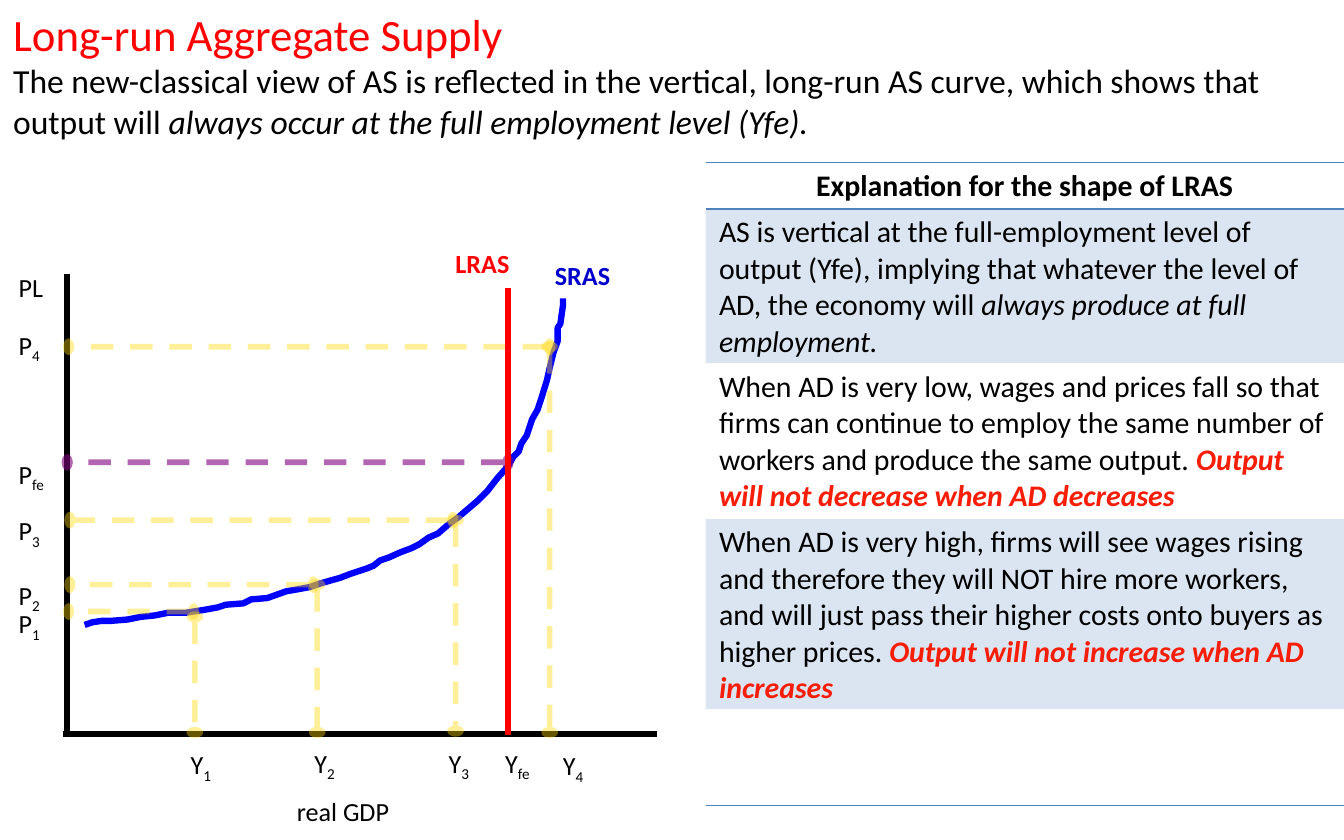
import pptx
import pptx.util
import pptx.dml.color
import pptx.enum.dml
import pptx.enum.shapes
import pptx.enum.text
import pptx.oxml
import pptx.oxml.ns

RGB = pptx.dml.color.RGBColor
RED = RGB(0xFF, 0x00, 0x00)
BLACK = RGB(0x00, 0x00, 0x00)
NAVY = RGB(0x00, 0x00, 0xCC)
BLUE = RGB(0x00, 0x00, 0xFF)
GOLD = RGB(0xFF, 0xD7, 0x00)
PURPLE = RGB(0x80, 0x00, 0x80)
WARN = RGB(0xF8, 0x1D, 0x06)
RULE = RGB(0x4F, 0x81, 0xBD)
PX = 9144  # EMU in one px, 100 px to the inch
PLAIN_STYLE = "{2D5ABB26-0587-4C30-8999-92F81FD0307C}"

# Formats
HEAD = {"size": 24, "color": RED}
BODY = {"size": 18, "color": BLACK}
CELL = {"size": 16, "color": BLACK}
TAG = {"size": 14, "color": BLACK}
SLANT = {"italic": True}
BOLD = {"bold": True}
ALERT = {"bold": True, "italic": True, "color": WARN}

# Content: paragraphs are lists of (text, format)
TITLE = [
    [("Long-run Aggregate Supply", HEAD)],
    [("The new-classical view of AS is reflected in the vertical, long-run AS "
      "curve, which shows that output will ", BODY),
     ("always occur at the full employment level (Yfe).", BODY | SLANT)],
]
ROWS = [  # height, shaded, runs
    (34, False, [("Explanation for the shape of LRAS", CELL | BOLD)]),
    (97, True, [
        ("AS is vertical at the full-employment level of output (Yfe), implying "
         "that whatever the level of AD, the economy will ", CELL),
        ("always produce at full employment.", CELL | SLANT)]),
    (116, False, [
        ("When AD is very low, wages and prices fall so that firms can continue "
         "to employ the same number of workers and produce the same output. ", CELL),
        ("Output will not decrease when AD decreases", CELL | ALERT)]),
    (120, True, [
        ("When AD is very high, firms will see wages rising and therefore they "
         "will NOT hire more workers, and will just pass their higher costs onto "
         "buyers as higher prices. ", CELL),
        ("Output will not increase when AD increases", CELL | ALERT)]),
    (72, False, []),
]
LABELS = [  # text, left, top, width, format
    ("PL", 4, 197, 81, TAG),
    ("SRAS", 403, 188, 89, TAG | BOLD | {"color": NAVY}),
    ("LRAS", 329, 179, 89, TAG | BOLD | {"color": RED}),
    ("real GDP", 211, 587, 135, TAG),
]
MARKS = [  # letter, subscript, left, top, width
    ("P", "1", 4, 447, 51), ("P", "2", 4, 426, 51), ("P", "3", 4, 378, 51),
    ("P", "4", 4, 240, 51), ("P", "fe", 4, 336, 57),
    ("Y", "1", 132, 552, 51), ("Y", "2", 224, 551, 51), ("Y", "3", 324, 551, 51),
    ("Y", "4", 409, 553, 51), ("Y", "fe", 366, 551, 59),
]
AXES = [(50, 204, 50, 545), (47, 546, 489, 546)]
DROPS = [(145, 459, 145, 545), (236, 435, 236, 545),
         (339, 387, 339, 544), (409, 258, 409, 545)]
LEVELS = [(144, 455, 51, 455), (233, 435, 52, 435),
          (337, 387, 52, 387), (409, 258, 51, 258)]
FULL = (378, 344, 50, 344)
LRAS = (378, 547, 378, 214)
SRAS = [
    (63, 465), (69, 463), (76, 462), (83, 462), (95, 461), (105, 459), (115, 458),
    (125, 456), (138, 456), (151, 454), (162, 452), (168, 450), (181, 449),
    (187, 446), (199, 445), (213, 440), (219, 439), (230, 437), (239, 434),
    (253, 430), (261, 427), (273, 423), (278, 421), (283, 417), (289, 415),
    (298, 411), (306, 408), (312, 405), (319, 400), (326, 397), (334, 390),
    (341, 385), (348, 379), (355, 373), (363, 365), (370, 356), (378, 347),
    (382, 340), (386, 336), (388, 330), (392, 324), (396, 312), (400, 305),
    (403, 296), (407, 283), (409, 274), (412, 262), (415, 254), (415, 244),
    (417, 241), (418, 234), (419, 227), (419, 222),
]


def node(xml):
    return pptx.oxml.parse_xml(xml.replace(
        "/>", ' xmlns:a="http://schemas.openxmlformats.org/drawingml/2006/main"/>', 1))


def fade(part, rate):
    clr = part.find(".//" + pptx.oxml.ns.qn("a:srgbClr"))
    clr.append(node(f'<a:alpha val="{rate * 1000}"/>'))


def write(para, runs):
    for text, look in runs:
        run = para.add_run()
        run.text = text
        run.font.name = "Calibri"
        for key, val in look.items():
            if key == "color":
                run.font.color.rgb = val
            elif key == "base":
                run.font._element.set("baseline", str(val * 1000))
            else:
                setattr(run.font, key, pptx.util.Pt(val) if key == "size" else val)


def label(shapes, box, paras):
    frame = shapes.add_textbox(*(n * PX for n in box)).text_frame
    frame.word_wrap = True
    frame.auto_size = pptx.enum.text.MSO_AUTO_SIZE.SHAPE_TO_FIT_TEXT
    for i, runs in enumerate(paras):
        write(frame.add_paragraph() if i else frame.paragraphs[0], runs)


def rule(shapes, ends, color, rate=None):
    """Draw a solid line, or a faded dashed one with round ends."""
    wire = shapes.add_connector(pptx.enum.shapes.MSO_CONNECTOR.STRAIGHT,
                                *(n * PX for n in ends))
    wire.line.color.rgb = color
    wire.line.width = pptx.util.Pt(3)
    if rate:
        wire.line.dash_style = pptx.enum.dml.MSO_LINE.DASH
        ln = wire.line._ln
        fade(ln, rate)
        for end in ("headEnd", "tailEnd"):
            ln.append(node(f'<a:{end} type="oval" w="med" len="sm"/>'))
    wire._element.spPr.append(node("<a:effectLst/>"))


def border(cell, side):
    edge = node(f'<a:{side} w="12700"/>')
    fill = node("<a:solidFill/>")
    fill.append(node(f'<a:srgbClr val="{RULE}"/>'))
    edge.append(fill)
    return edge


deck = pptx.Presentation()
deck.slide_width, deck.slide_height = 1000 * PX, 625 * PX
slide = deck.slides.add_slide(deck.slide_layouts[6])
label(slide.shapes, (0, 0, 1000, 111), TITLE)

# Explanation table
high = sum(row[0] for row in ROWS)
table = slide.shapes.add_table(
    len(ROWS), 1, 525 * PX, 121 * PX, 475 * PX, high * PX).table
table.first_row = table.horz_banding = False
table._tbl.tblPr.find(pptx.oxml.ns.qn("a:tableStyleId")).text = PLAIN_STYLE
EDGES = {0: ("lnT", "lnB"), len(ROWS) - 1: ("lnB",)}
for i, (tall, shade, runs) in enumerate(ROWS):
    table.rows[i].height = tall * PX
    cell = table.cell(i, 0)
    cell.vertical_anchor = pptx.enum.text.MSO_ANCHOR.MIDDLE
    cell.margin_left = cell.margin_right = 10 * PX
    cell.margin_top = cell.margin_bottom = 4 * PX
    write(cell.text_frame.paragraphs[0], runs)
    prop = cell._tc.get_or_add_tcPr()
    for side in EDGES.get(i, ()):
        prop.append(border(cell, side))
    if shade:
        cell.fill.solid()
        cell.fill.fore_color.rgb = RULE
        fade(prop, 20)
    else:
        cell.fill.background()
table.cell(0, 0).text_frame.paragraphs[0].alignment = pptx.enum.text.PP_ALIGN.CENTER

# Supply graph: axes, curve, guides, labels, vertical LRAS
graph = slide.shapes.add_group_shape().shapes
for ends in AXES:
    rule(graph, ends, BLACK)
path = graph.build_freeform(*SRAS[0], scale=PX)
path.add_line_segments(SRAS[1:], close=False)
curve = path.convert_to_shape()
curve.fill.background()
curve.line.color.rgb = BLUE
curve.line.width = pptx.util.Pt(3.39)
curve.shadow.inherit = False
for ends in DROPS + LEVELS:
    rule(graph, ends, GOLD, 40)
rule(graph, FULL, PURPLE, 60)
for text, x, y, wide, look in LABELS:
    label(graph, (x, y, wide, 36), [[(text, look)]])
for text, sub, x, y, wide in MARKS:
    label(graph, (x, y, wide, 36), [[(text, TAG), (sub, TAG | {"base": -25})]])
rule(graph, LRAS, RED)

deck.save("out.pptx")
